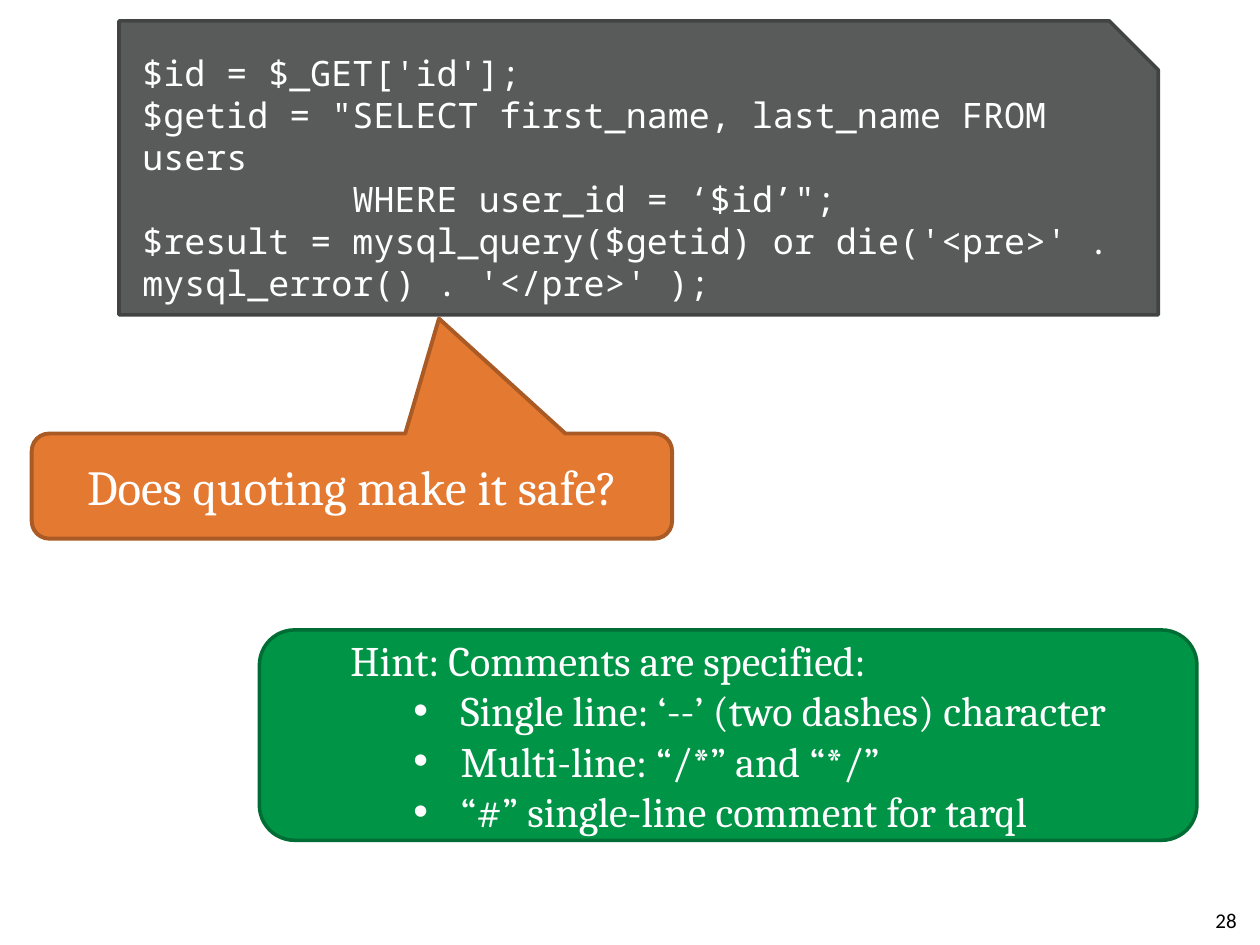
from lxml import etree
from pptx import Presentation
from pptx import util as u
from pptx.dml import color
from pptx.enum import shapes, text
from pptx.oxml import ns


def rgb(value):
    return color.RGBColor.from_string(value)


def write(shape, lines, font, size, ink, align, anchor):
    """Fill the shape with (text, left margin, first-line indent, bullet) lines."""
    frame = shape.text_frame
    frame.word_wrap = True
    frame.vertical_anchor = anchor
    for number, (words, margin, indent, bullet) in enumerate(lines):
        line = frame.add_paragraph() if number else frame.paragraphs[0]
        line.alignment = align
        run = line.add_run()
        run.text = words
        run.font.name, run.font.size = font, u.Pt(size)
        run.font.color.rgb = rgb(ink)
        properties = line._p.get_or_add_pPr()
        properties.set("marL", str(u.Cm(margin)))
        properties.set("indent", str(u.Cm(indent)))
        if bullet:
            etree.SubElement(properties, ns.qn("a:buFont")).set("typeface", "Arial")
            etree.SubElement(properties, ns.qn("a:buChar")).set("char", bullet)


prs = Presentation()
prs.slide_width, prs.slide_height = u.Cm(25.4), u.Cm(19.05)
slide = prs.slides.add_slide(prs.slide_layouts[6])

LEFT, CENTER, RIGHT = text.PP_ALIGN.LEFT, text.PP_ALIGN.CENTER, text.PP_ALIGN.RIGHT
TOP, MIDDLE = text.MSO_ANCHOR.TOP, text.MSO_ANCHOR.MIDDLE
KIND = shapes.MSO_SHAPE

code = [
    ("$id = $_GET['id'];", 0, 0, None),
    ("$getid = \"SELECT first_name, last_name FROM users", 0, 0, None),
    ("WHERE user_id = ‘$id’\";", 4.24, 0, None),
    ("$result = mysql_query($getid) or die('<pre>' . mysql_error() . '</pre>' );", 0, 0, None),
]
question = [("Does quoting make it safe?", 0, 0, None)]
hint = [("Hint: Comments are specified:", 0, 0, None)] + [
    (way, 2.22, -0.95, "•")
    for way in (
        "Single line: ‘--’ (two dashes) character",
        "Multi-line: “/*” and “*/”",
        "“#” single-line comment for tarql",
    )
]

# kind, place, adjustments, fill, line, line width, left inset, lines, font, size, align, anchor
panels = [
    (KIND.SNIP_1_RECTANGLE, (2.4, 0.42, 20.95, 5.93), (), "595A5A", "424343", 2, 0.47,
     code, "Noto Sans Mono", 20, LEFT, TOP),
    (KIND.ROUNDED_RECTANGULAR_CALLOUT, (0.64, 8.74, 12.91, 2.12), (0.136, -1.593, 0.167),
     "E47932", "A95A25", 2.25, 0.25, question, "Cambria", 28, CENTER, MIDDLE),
    (KIND.ROUNDED_RECTANGLE, (5.23, 12.7, 18.9, 4.24), (), "009446", "006D34", 2, 1.63,
     hint, "Cambria", 24, LEFT, MIDDLE),
]
for kind, place, adjustments, fill, edge, width, inset, lines, font, size, align, anchor in panels:
    panel = slide.shapes.add_shape(kind, *map(u.Cm, place))
    for index, value in enumerate(adjustments):
        panel.adjustments[index] = value
    panel.shadow.inherit = False
    panel.fill.solid()
    panel.fill.fore_color.rgb = rgb(fill)
    panel.line.color.rgb = rgb(edge)
    panel.line.width = u.Pt(width)
    panel.text_frame.margin_left = u.Cm(inset)
    write(panel, lines, font, size, "FFFFFF", align, anchor)

page_number = slide.shapes.add_textbox(*map(u.Cm, (19.25, 18.03, 5.93, 1.02)))
write(page_number, [("28", 0, 0, None)], "Calibri", 12, "000000", RIGHT, MIDDLE)

prs.save("out.pptx")
